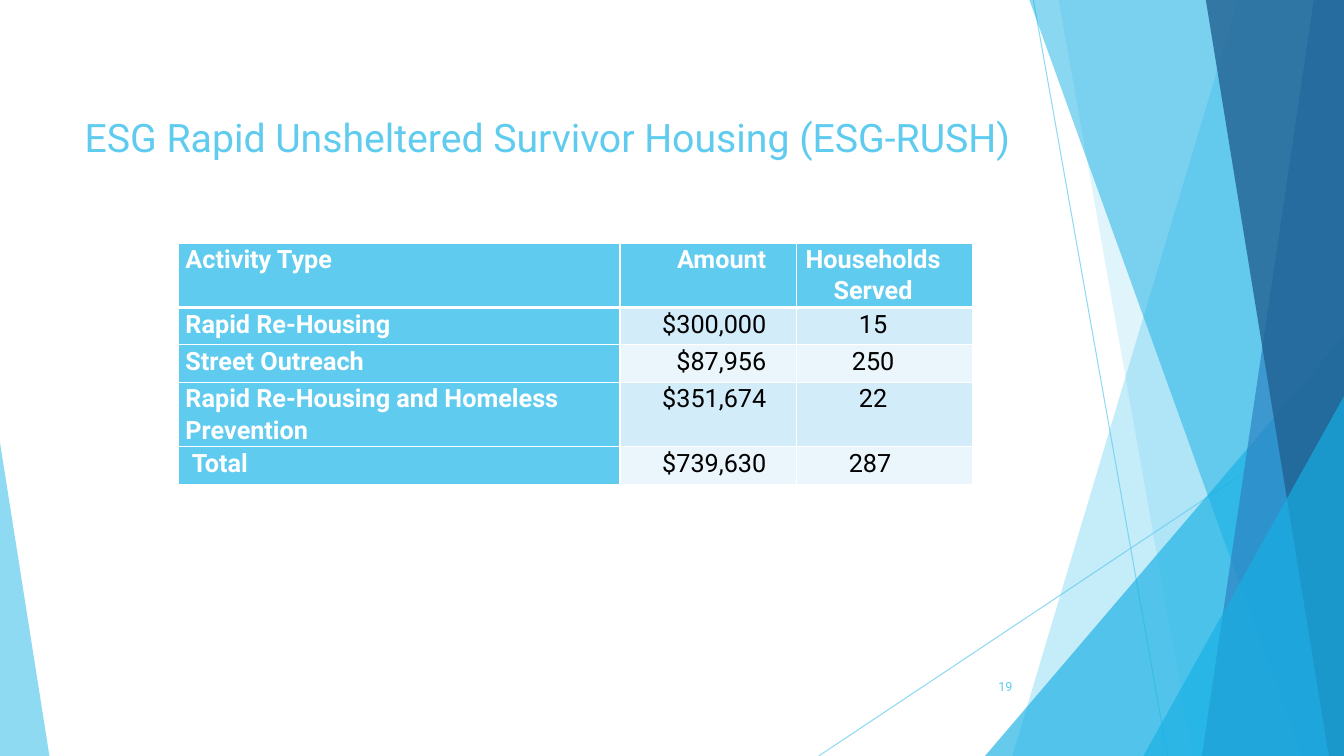
from lxml.etree import SubElement
from pptx import Presentation
from pptx.dml.color import RGBColor
from pptx.enum.shapes import MSO_CONNECTOR as Connector, MSO_SHAPE as Shape
from pptx.enum.text import MSO_ANCHOR as Anchor, PP_ALIGN as Align
from pptx.oxml.ns import qn
from pptx.util import Inches, Pt

WIDTH, HEIGHT = 13.33, 7.5
SKY, CYAN, BLUE, NAVY = "5FCBEF", "17B0E4", "2E83C3", "226292"
WHITE, BLACK = "FFFFFF", "000000"
BANDS = ["D2ECF9", "EAF6FC"]

RAYS = [((10.25, 0), (11.58, HEIGHT)), ((WIDTH, 4.03), (8.12, HEIGHT))]
LOWER_PANES = [(12.28, 10.04, SKY, 36), (10.5, 11.83, SKY, 20)]
UPPER_PANES = [(10.21, 12.91, CYAN, 50), (13.03, 11.92, BLUE, 70),
               (11.96, 13.18, NAVY, 80)]

ACTIVITIES = [
    ("Activity Type", "Amount", "Households Served"),
    ("Rapid Re-Housing", "$300,000", "15"),
    ("Street Outreach", "$87,956", "250"),
    ("Rapid Re-Housing and Homeless Prevention", "$351,674", "22"),
    ("\u00a0Total", "$739,630", "287\u00a0"),
]
COLUMN_WIDTHS = [4.38, 1.75, 1.75]
ROW_HEIGHTS = [0.63, 0.37, 0.37, 0.63, 0.37]
COLUMN_ALIGNS = [Align.LEFT, Align.RIGHT, Align.CENTER]
COLUMN_RIGHT_MARGINS = [0.07, 0.3, 0.3]


def color(hex_value):
    """Turn a hex string into a colour."""
    return RGBColor.from_string(hex_value)


def set_opacity(element, percent):
    """Make the first solid colour of an element partly transparent."""
    solid = next(element.iter(qn("a:srgbClr")))
    SubElement(solid, qn("a:alpha"), val=str(percent * 1000))


def style_pane(pane, hex_value, opacity):
    """Give a decorative pane its see-through fill and no outline."""
    pane.shadow.inherit = False
    pane.fill.solid()
    pane.fill.fore_color.rgb = color(hex_value)
    pane.line.fill.background()
    set_opacity(pane._element.spPr, opacity)


def add_ray(slide, start, end):
    """Draw one thin decorative line."""
    ray = slide.shapes.add_connector(
        Connector.STRAIGHT, *(Inches(value) for value in start + end))
    ray.line.color.rgb = color(SKY)
    ray.line.width = Pt(0.75)
    set_opacity(ray._element.spPr, 70)
    SubElement(ray._element.spPr, qn("a:effectLst"))


def add_pane(slide, top_x, bottom_x, hex_value, opacity):
    """Fill from a slanted left edge to the right side of the slide."""
    outline = slide.shapes.build_freeform(
        Inches(top_x), 0, scale=1.0)
    corners = [(WIDTH, 0), (WIDTH, HEIGHT), (bottom_x, HEIGHT)]
    outline.add_line_segments([(Inches(x), Inches(y)) for x, y in corners])
    style_pane(outline.convert_to_shape(), hex_value, opacity)


def add_wedge(slide, left, top, width, apex, hex_value, opacity):
    """Stand a right triangle on the bottom edge of the slide."""
    wedge = slide.shapes.add_shape(
        Shape.ISOSCELES_TRIANGLE, Inches(left), Inches(top),
        Inches(width), Inches(HEIGHT - top))
    wedge.adjustments[0] = apex
    style_pane(wedge, hex_value, opacity)


def add_backdrop(slide):
    """Layer the rays, panes and wedges from back to front."""
    for start, end in RAYS:
        add_ray(slide, start, end)
    for pane in LOWER_PANES:
        add_pane(slide, *pane)
    add_wedge(slide, 9.77, 3.33, 3.56, 1, CYAN, 66)
    for pane in UPPER_PANES:
        add_pane(slide, *pane)
    add_wedge(slide, 11.34, 3.93, 1.99, 1, CYAN, 66)
    add_wedge(slide, 0, 4.39, 0.49, 0, SKY, 70)


def set_text(frame, text, size, hex_value, align, bold=False):
    """Write one formatted paragraph into a text frame."""
    frame.word_wrap = True
    paragraph = frame.paragraphs[0]
    paragraph.text = text
    paragraph.alignment = align
    paragraph.font.name = "Roboto"
    paragraph.font.size = Pt(size)
    paragraph.font.bold = bold
    paragraph.font.color.rgb = color(hex_value)
    return paragraph


def add_title(slide, left, top, width, height):
    """Place the slide title."""
    title = slide.shapes.title
    title.left, title.top = Inches(left), Inches(top)
    title.width, title.height = Inches(width), Inches(height)
    title.text_frame.vertical_anchor = Anchor.MIDDLE
    heading = set_text(
        title.text_frame, "ESG Rapid Unsheltered Survivor Housing (ESG-RUSH)",
        28, SKY, Align.LEFT)
    heading.line_spacing = 0.9


def add_page_number(slide, left, top, width, height):
    """Place the page number."""
    box = slide.shapes.add_textbox(
        Inches(left), Inches(top), Inches(width), Inches(height))
    box.text_frame.vertical_anchor = Anchor.MIDDLE
    number = set_text(box.text_frame, "19", 9, SKY, Align.RIGHT)
    number.space_after = Pt(6)


def set_borders(cell, top_width, bottom_width):
    """Draw white lines around a cell."""
    properties = cell._tc.get_or_add_tcPr()
    widths = {"L": 1, "R": 1, "T": top_width, "B": bottom_width}
    for index, (side, width) in enumerate(widths.items()):
        border = SubElement(properties, qn(f"a:ln{side}"), w=str(Pt(width)))
        fill = SubElement(border, qn("a:solidFill"))
        SubElement(fill, qn("a:srgbClr"), val=WHITE)
        properties.insert(index, border)


def fill_cell(cell, text, row, column):
    """Write and format one table cell."""
    heading = row == 0 or column == 0
    cell.margin_left = Inches(0.07)
    cell.margin_right = Inches(COLUMN_RIGHT_MARGINS[column])
    cell.margin_top = cell.margin_bottom = 0
    cell.fill.solid()
    cell.fill.fore_color.rgb = color(SKY if heading else BANDS[(row - 1) % 2])
    paragraph = set_text(cell.text_frame, text, 18, WHITE if heading else BLACK,
                         COLUMN_ALIGNS[column], heading)
    paragraph.line_spacing = 1.07
    set_borders(cell, 3 if row == 1 else 1, 3 if row == 0 else 1)


def add_activity_table(slide, left, top):
    """Build the table of amounts and households by activity."""
    table = slide.shapes.add_table(
        len(ACTIVITIES), len(COLUMN_WIDTHS), Inches(left), Inches(top),
        Inches(sum(COLUMN_WIDTHS)), Inches(sum(ROW_HEIGHTS))).table
    for column, width in zip(table.columns, COLUMN_WIDTHS):
        column.width = Inches(width)
    for row, height in zip(table.rows, ROW_HEIGHTS):
        row.height = Inches(height)
    for row, activity in enumerate(ACTIVITIES):
        for column, text in enumerate(activity):
            fill_cell(table.cell(row, column), text, row, column)


def main():
    """Build and save the slide."""
    deck = Presentation()
    deck.slide_width, deck.slide_height = Inches(WIDTH), Inches(HEIGHT)
    slide = deck.slides.add_slide(deck.slide_layouts[5])
    add_backdrop(slide)
    add_title(slide, 0.74, 0.67, 10.5, 1.44)
    add_page_number(slide, 9.39, 6.61, 0.75, 0.4)
    add_activity_table(slide, 1.77, 2.41)
    deck.save("out.pptx")


if __name__ == "__main__":
    main()
